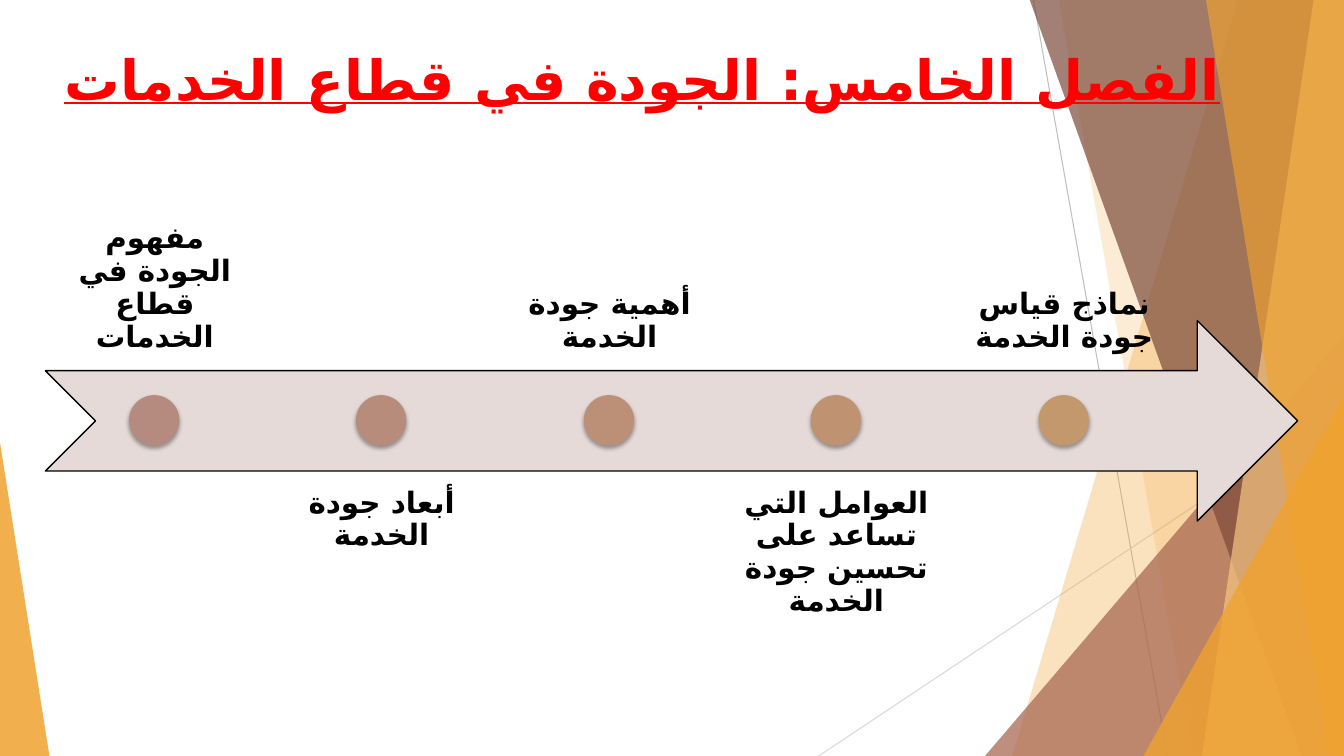
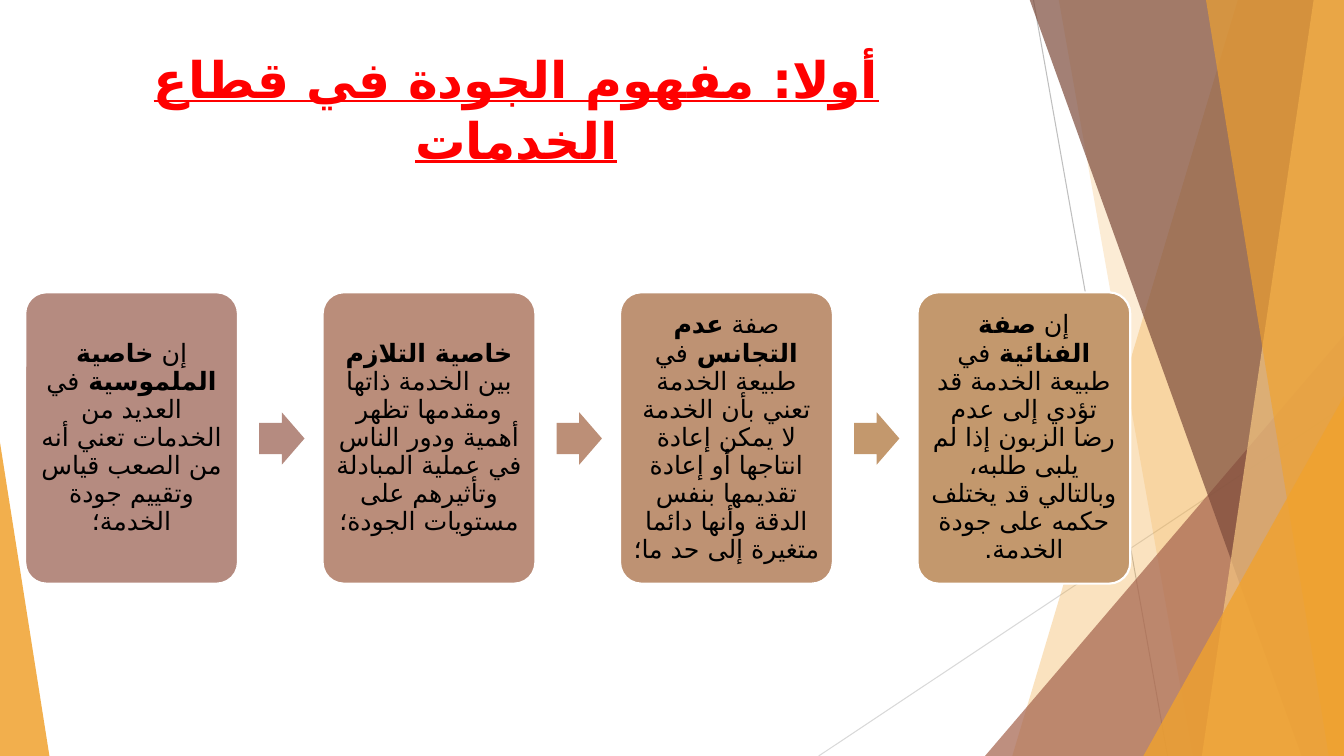
from lxml import etree
from pptx import Presentation
from pptx.dml.color import RGBColor
from pptx.enum.shapes import MSO_CONNECTOR, MSO_SHAPE
from pptx.enum.text import MSO_ANCHOR, MSO_AUTO_SIZE, PP_ALIGN
from pptx.oxml.ns import qn
from pptx.util import Pt

PX = 9144
WIDTH, HEIGHT = 1333, 750

STRAIGHT = MSO_CONNECTOR.STRAIGHT
TRIANGLE = MSO_SHAPE.ISOSCELES_TRIANGLE
NOTCHED_ARROW = MSO_SHAPE.NOTCHED_RIGHT_ARROW
RIGHT_ARROW = MSO_SHAPE.RIGHT_ARROW
ROUNDED = MSO_SHAPE.ROUNDED_RECTANGLE
OVAL = MSO_SHAPE.OVAL
TOP, MIDDLE, BOTTOM = MSO_ANCHOR.TOP, MSO_ANCHOR.MIDDLE, MSO_ANCHOR.BOTTOM
NO_AUTOFIT = MSO_AUTO_SIZE.NONE
CENTER = PP_ALIGN.CENTER

ARABIC_FONT = "DejaVu Sans"
BLACK, WHITE, RED = "000000", "FFFFFF", "FF0000"
AMBER, PALE_AMBER, BROWN, DARK_BROWN = "F0A22E", "F6C782", "A5644E", "7C4B3B"
ARROW_FILL = "E5DAD8"

TOPICS = [
    ("مفهوم الجودة في قطاع الخدمات", "Arial", "B58B80"),
    ("أبعاد جودة الخدمة", "Arial", "B88C7B"),
    ("أهمية جودة الخدمة", "Cabin", "BC8F77"),
    ("العوامل التي تساعد على تحسين جودة الخدمة", "Arial", "BF9372"),
    ("نماذج قياس جودة الخدمة", "Cabin", "C3986D"),
]

CARDS = [
    ("B58B80", [
        ("إن ", False),
        ("خاصية الملموسية ", True),
        ("في العديد من الخدمات تعني أنه من الصعب قياس وتقييم جودة الخدمة؛", False),
    ]),
    ("BA8D7A", [
        ("خاصية التلازم ", True),
        ("بين الخدمة ذاتها ومقدمها تظهر أهمية ودور الناس في عملية المبادلة "
         "وتأثيرهم على مستويات الجودة؛", False),
    ]),
    ("BE9273", [
        ("صفة ", False),
        ("عدم التجانس ", True),
        ("في طبيعة الخدمة تعني بأن الخدمة لا يمكن إعادة انتاجها أو إعادة "
         "تقديمها بنفس الدقة وأنها دائما متغيرة إلى حد ما؛", False),
    ]),
    ("C3986D", [
        ("إن ", False),
        ("صفة الفنائية ", True),
        ("في طبيعة الخدمة قد تؤدي إلى عدم رضا الزبون إذا لم يلبى طلبه، "
         "وبالتالي قد يختلف حكمه على جودة الخدمة.", False),
    ]),
]
CARD_ARROW_FILLS = ["B58B80", "BC8F77", "C3986D"]


def color(value):
    return RGBColor.from_string(value)


def emu(*lengths):
    return [length * PX for length in lengths]


def paint(shape, fill, opacity=100, line=None, line_width=1):
    shape.shadow.inherit = False
    shape.fill.solid()
    shape.fill.fore_color.rgb = color(fill)
    if opacity < 100:
        fill_color = shape._element.spPr.find(".//" + qn("a:srgbClr"))
        etree.SubElement(fill_color, qn("a:alpha"), val=str(opacity * 1000))
    if line:
        shape.line.color.rgb = color(line)
        shape.line.width = Pt(line_width)
    else:
        shape.line.fill.background()
    return shape


def add_preset(slide, preset, box, fill, adjustments=(), **options):
    shape = slide.shapes.add_shape(preset, *emu(*box))
    for index, value in enumerate(adjustments):
        shape.adjustments[index] = value
    return paint(shape, fill, **options)


def add_line(slide, start, end, line_color):
    connector = slide.shapes.add_connector(STRAIGHT, *emu(*start, *end))
    connector.line.color.rgb = color(line_color)
    connector.line.width = Pt(0.75)
    etree.SubElement(connector._element.spPr, qn("a:effectLst"))
    return connector


def add_shard(slide, top_x, bottom_x, fill, opacity):
    builder = slide.shapes.build_freeform(top_x, -1, scale=PX)
    builder.add_line_segments([(WIDTH, -1), (WIDTH, HEIGHT), (bottom_x, HEIGHT)])
    return paint(builder.convert_to_shape(), fill, opacity)


def add_drop_shadow(shape):
    effects = shape._element.spPr.find(qn("a:effectLst"))
    shadow = etree.SubElement(
        effects, qn("a:outerShdw"),
        blurRad=str(Pt(3)), dist=str(Pt(2)), dir="5400000", rotWithShape="0")
    shadow_color = etree.SubElement(shadow, qn("a:srgbClr"), val=BLACK)
    etree.SubElement(shadow_color, qn("a:alpha"), val="35000")


def set_frame(text_frame, anchor, inset):
    text_frame.word_wrap = True
    text_frame.auto_size = NO_AUTOFIT
    text_frame.vertical_anchor = anchor
    text_frame.margin_left = text_frame.margin_right = inset * PX
    text_frame.margin_top = text_frame.margin_bottom = inset * PX


def write(text_frame, segments, size, font_name, font_color, line_spacing=0.93, underline=False):
    paragraph = text_frame.paragraphs[0]
    paragraph.alignment = CENTER
    paragraph.line_spacing = line_spacing
    paragraph._p.get_or_add_pPr().set("rtl", "1")
    for text, bold in segments:
        run = paragraph.add_run()
        run.text = text
        run.font.size = Pt(size)
        run.font.bold = bold
        run.font.underline = underline
        run.font.color.rgb = color(font_color)
        run.font.name = font_name
        properties = run._r.get_or_add_rPr()
        properties.set("lang", "ar-SA")
        etree.SubElement(properties, qn("a:cs"), typeface=ARABIC_FONT)


def move_backdrop_to_layout(slide, layout):
    backdrop = [
        add_line(slide, (1025, 0), (1158, HEIGHT), "BFBFBF"),
        add_line(slide, (WIDTH, 403), (812, HEIGHT), "D9D9D9"),
        add_shard(slide, 1228, 1004, AMBER, 30),
        add_shard(slide, 1050, 1183, AMBER, 20),
        add_preset(slide, TRIANGLE, (977, 333, 356, 417), BROWN, [1], opacity=72),
        add_shard(slide, 1021, 1291, DARK_BROWN, 70),
        add_shard(slide, 1303, 1192, PALE_AMBER, 70),
        add_shard(slide, 1196, 1318, AMBER, 65),
        add_preset(slide, TRIANGLE, (1134, 393, 199, 357), AMBER, [1], opacity=80),
        add_preset(slide, TRIANGLE, (0, 439, 49, 311), AMBER, [0], opacity=85),
    ]
    for index, shape in enumerate(backdrop):
        properties = shape._element.find(".//" + qn("p:cNvPr"))
        properties.set("id", str(100 + index))
        layout.shapes._spTree.insert(2 + index, shape._element)


def place_title(slide, box, text, size):
    title = slide.shapes.title
    title.left, title.top, title.width, title.height = emu(*box)
    set_frame(title.text_frame, TOP, 5)
    write(title.text_frame, [(text, True)], size, "Arial", RED, 1.0, True)


def add_timeline(slide, box):
    left, top, width, height = box
    add_preset(slide, NOTCHED_ARROW, box, ARROW_FILL, line=BLACK)
    label_width, dot_size = 215, 50
    for index, (text, font_name, fill) in enumerate(TOPICS):
        label_left = left + 1 + index * 902 // 4
        above = index % 2 == 0
        label_top = top - 150 if above else top + 149
        label = slide.shapes.add_textbox(*emu(label_left, label_top, label_width, height))
        set_frame(label.text_frame, BOTTOM if above else TOP, 16)
        write(label.text_frame, [(text, True)], 21, font_name, BLACK)
        dot_left = label_left + (label_width - dot_size) // 2
        dot_top = top + (height - dot_size) // 2
        dot = add_preset(slide, OVAL, (dot_left, dot_top, dot_size, dot_size), fill)
        add_drop_shadow(dot)


def add_card_chain(slide, box):
    left, top, width, height = box
    card_width = 211
    step = (width - card_width) // (len(CARDS) - 1)
    arrow_width, arrow_height = 45, 52
    for index, (fill, segments) in enumerate(CARDS):
        card_left = left + index * step
        card = add_preset(slide, ROUNDED, (card_left, top, card_width, height),
                          fill, [0.1], line=WHITE, line_width=1.5)
        set_frame(card.text_frame, MIDDLE, 7)
        write(card.text_frame, segments, 18, "Cabin", BLACK)
        if index < len(CARD_ARROW_FILLS):
            arrow_box = (card_left + card_width + 21, top + (height - arrow_height) // 2 + 1,
                         arrow_width, arrow_height)
            add_preset(slide, RIGHT_ARROW, arrow_box, CARD_ARROW_FILLS[index], [0.6, 0.5])


def main():
    presentation = Presentation()
    presentation.slide_width, presentation.slide_height = emu(WIDTH, HEIGHT)
    layout = presentation.slide_layouts[5]

    chapter = presentation.slides.add_slide(layout)
    move_backdrop_to_layout(chapter, layout)
    place_title(chapter, (16, 40, 1242, 159), "الفصل الخامس: الجودة في قطاع الخدمات", 39.6)
    add_timeline(chapter, (45, 318, 1242, 199))

    concept = presentation.slides.add_slide(layout)
    place_title(concept, (42, 43, 940, 80), "أولا: مفهوم الجودة في قطاع الخدمات", 36)
    add_card_chain(concept, (25, 290, 1096, 289))

    presentation.save("out.pptx")


if __name__ == "__main__":
    main()
